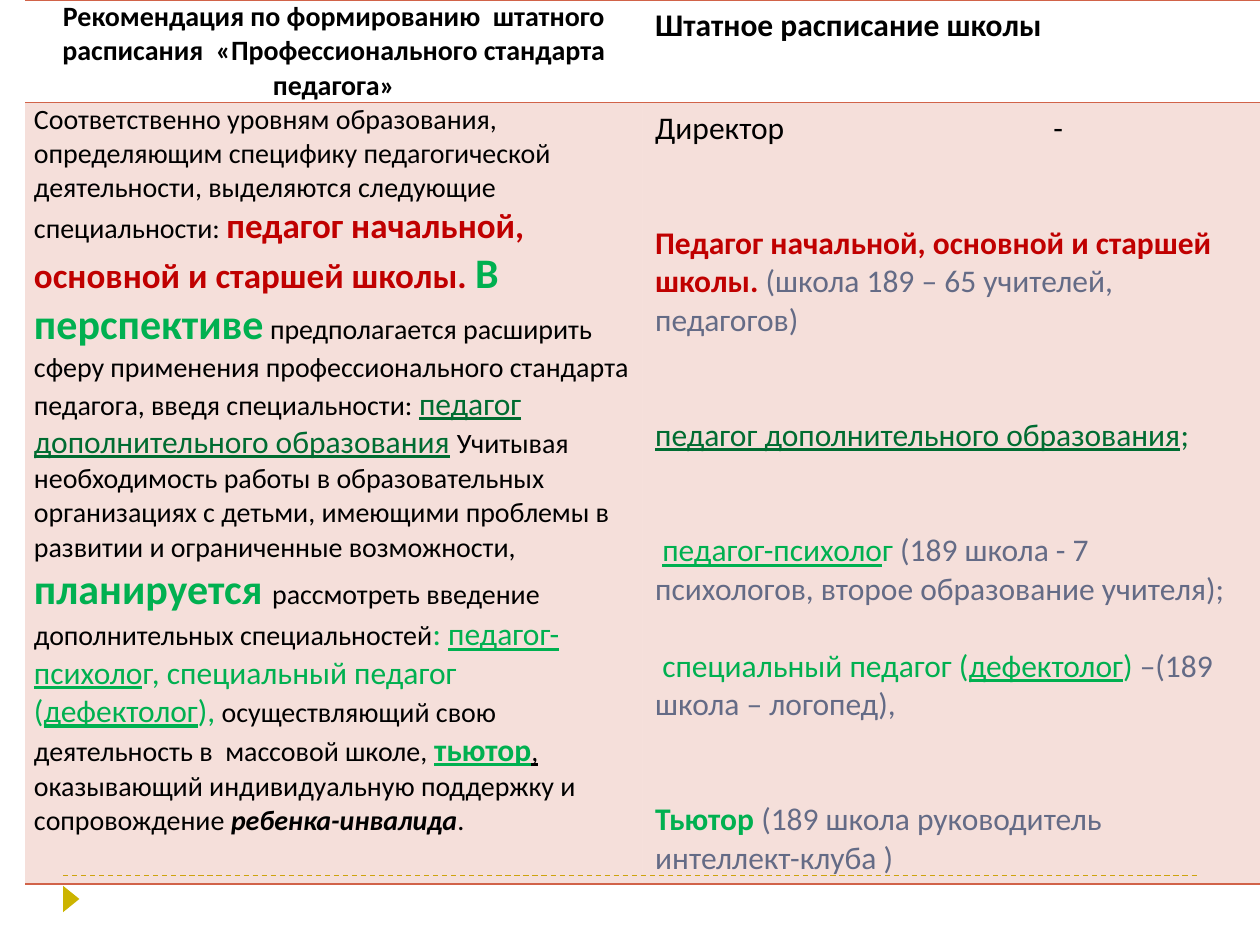
from lxml import etree
from pptx import Presentation
from pptx.dml.color import RGBColor
from pptx.enum import dml, shapes, text
from pptx.oxml.ns import qn
from pptx.util import Inches, Pt

HUES = {"black": "000000", "red": "C00000", "green": "00B050", "dark": "006C31",
        "slate": "646B86", "rust": "D16349", "gold": "CCB400"}

# Content: a run is (text, size, colour, flags), a paragraph is (lines skipped before, runs)
HEADS = [
    [(0, [("Рекомендация по формированию  штатного расписания  «Профессионального стандарта педагога»",
           16, "black", "b")])],
    [(0, [("Штатное расписание школы", 18, "black", "b")])],
]
ADVICE = [(0, [
    ("Соответственно уровням образования, определяющим специфику педагогической деятельности, "
     "выделяются следующие специальности: ", 16, "black", ""),
    ("педагог начальной, основной и старшей школы. ", 20, "red", "b"),
    ("В перспективе", 24, "green", "b"),
    (" предполагается расширить сферу применения профессионального стандарта педагога, "
     "введя специальности: ", 16, "black", ""),
    ("педагог дополнительного образования", 18, "dark", "u"),
    (" ", 18, "dark", ""),
    ("Учитывая необходимость работы в образовательных организациях с детьми, имеющими проблемы "
     "в развитии и ограниченные возможности, ", 16, "black", ""),
    ("планируется ", 24, "green", "b"),
    ("рассмотреть введение дополнительных специальностей", 16, "black", ""),
    (": ", 18, "green", ""),
    ("педагог-психоло", 18, "green", "u"),
    ("г, специальный педагог (", 18, "green", ""),
    ("дефектолог", 18, "green", "u"),
    ("),", 18, "green", ""),
    (" осуществляющий свою деятельность в  массовой школе, ", 16, "black", ""),
    ("тьютор", 18, "green", "bu"),
    (",", 16, "black", "u"),
    (" оказывающий индивидуальную поддержку и сопровождение ", 16, "black", ""),
    ("ребенка-инвалида", 16, "black", "bi"),
    (".", 16, "black", ""),
])]
STAFF = [
    (0, [("Директор\t-", 18, "black", "")]),
    (2, [("Педагог начальной, основной и старшей школы. ", 18, "red", "b"),
         ("(школа 189 – 65 учителей,  педагогов)", 18, "slate", "")]),
    (2, [("педагог дополнительного образования", 18, "dark", "u"),
         (";", 18, "dark", "")]),
    (2, [(" ", 18, "green", ""),
         ("педагог-психоло", 18, "green", "u"),
         ("г ", 18, "green", ""),
         ("(189 школа - 7 психологов, второе образование учителя);", 18, "slate", "")]),
    (1, [(" специальный педагог (", 18, "green", ""),
         ("дефектолог", 18, "green", "u"),
         (") ", 18, "green", ""),
         ("–(189 школа – логопед),", 18, "slate", "")]),
    (2, [("Тьютор ", 18, "green", "b"),
         ("(189 школа руководитель интеллект-клуба )", 18, "slate", "")]),
]
ROWS = [HEADS, [ADVICE, STAFF]]
TALL = [0.81, 6.2]
WIDE = 4.9
LINE = 21.95  # points in one 18 pt line


def rgb(hue):
    return RGBColor.from_string(HUES[hue])


def sub(node, tag, **attrs):
    return etree.SubElement(node, qn(tag), attrs)


def write(frame, paras):
    for i, (skip, runs) in enumerate(paras):
        para = frame.add_paragraph() if i else frame.paragraphs[0]
        para.space_before = Pt(skip * LINE)
        for words, size, hue, flags in runs:
            run = para.add_run()
            run.text = words
            form = {"name": "Calibri", "size": Pt(size), "bold": "b" in flags,
                    "italic": "i" in flags, "underline": "u" in flags}
            for key, val in form.items():
                setattr(run.font, key, val)
            run.font.color.rgb = rgb(hue)


def edge(cell, sides):
    props = cell._tc.get_or_add_tcPr()
    for side in "LRTB":
        line = sub(props, "a:ln" + side, w="12700")
        if side in sides:
            sub(sub(line, "a:solidFill"), "a:srgbClr", val=HUES["rust"])
        else:
            sub(line, "a:noFill")


deck = Presentation()
deck.slide_width, deck.slide_height = Inches(10), Inches(7.5)
slide = deck.slides.add_slide(deck.slide_layouts[6])

# Footer rule and marker
rule = slide.shapes.add_connector(shapes.MSO_CONNECTOR.STRAIGHT, Inches(0.5), Inches(6.95),
                                  Inches(9.5), Inches(6.95))
rule.line.color.rgb = rgb("gold")
rule.line.width = Pt(0.75)
rule.line.dash_style = dml.MSO_LINE.DASH
sub(rule._element.spPr, "a:effectLst")

mark = slide.shapes.add_shape(shapes.MSO_SHAPE.ISOSCELES_TRIANGLE, Inches(0.46), Inches(7.07),
                              Inches(0.21), Inches(0.13))
mark.rotation = 90
mark.shadow.inherit = False
mark.fill.solid()
mark.fill.fore_color.rgb = rgb("gold")
mark.line.fill.background()

# Staffing table
table = slide.shapes.add_table(2, 2, Inches(0.2), 0, Inches(2 * WIDE), Inches(sum(TALL))).table
table.horz_banding = table.first_row = False
for col in table.columns:
    col.width = Inches(WIDE)
for r, (row, tall) in enumerate(zip(ROWS, TALL)):
    table.rows[r].height = Inches(tall)
    for c, paras in enumerate(row):
        cell = table.cell(r, c)
        edge(cell, "TB")
        if r:
            cell.fill.solid()
            cell.fill.fore_color.rgb = rgb("rust")
            tint = cell._tc.tcPr.find(qn("a:solidFill"))
            sub(tint.find(qn("a:srgbClr")), "a:alpha", val="20000")
        else:
            cell.fill.background()
        if c == 0:
            cell.margin_left = cell.margin_right = Inches(0.07)
            cell.margin_top = cell.margin_bottom = 0
        write(cell.text_frame, paras)
table.cell(0, 0).text_frame.paragraphs[0].alignment = text.PP_ALIGN.CENTER

# Tab stop for the dash after the director
props = table.cell(1, 1).text_frame.paragraphs[0]._p.get_or_add_pPr()
sub(sub(props, "a:tabLst"), "a:tab", pos=str(Inches(3.16)), algn="l")

deck.save("out.pptx")
